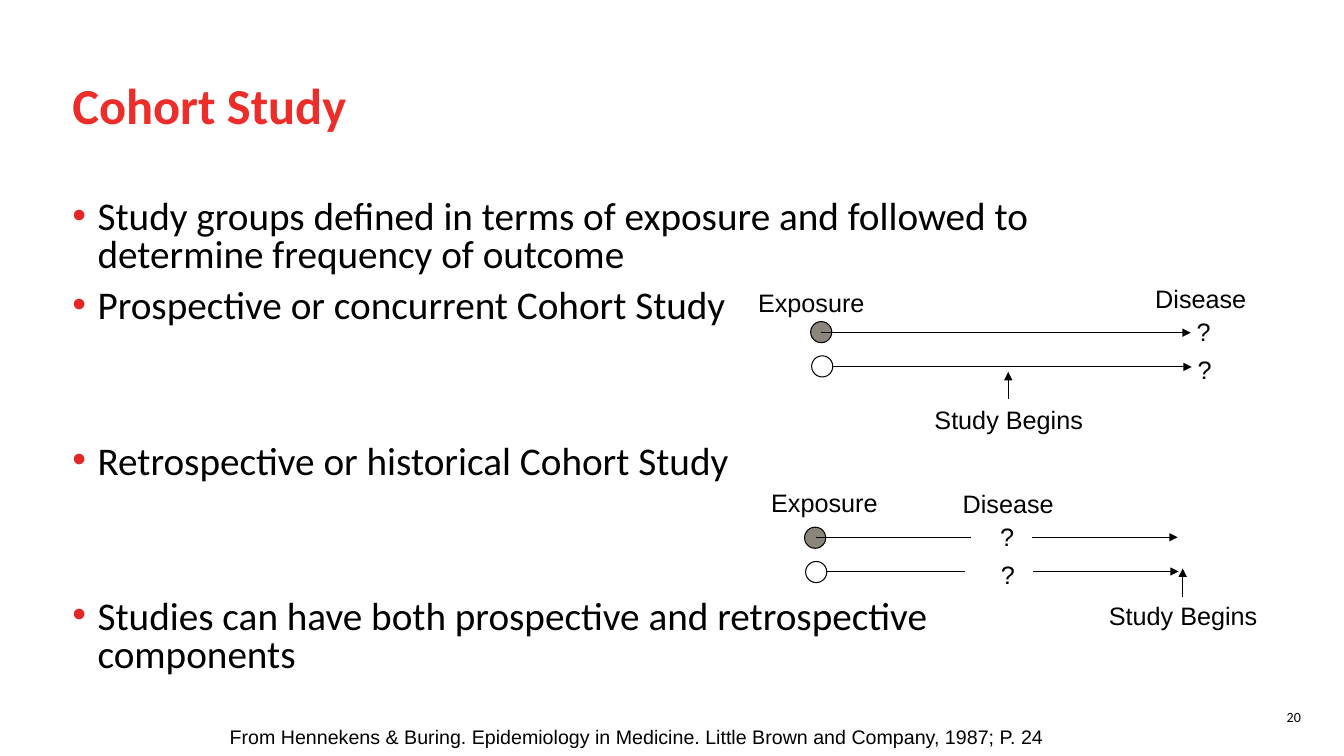
from lxml import etree
from pptx import Presentation
from pptx import util as u
from pptx.dml.color import RGBColor
from pptx.enum import shapes, text
from pptx.oxml.ns import qn

COLORS = {"title": "EE2C2A", "bullet": "E32726", "ink": "000000",
          "exposed": "8C857B", "unexposed": "FFFFFF"}

TITLE = "Cohort Study"
# (bullet text, points before it); wide gaps leave room for the diagrams
BULLETS = [
    ("Study groups defined in terms of exposure and followed to determine frequency of outcome", 0),
    ("Prospective or concurrent Cohort Study", 10),
    ("Retrospective or historical Cohort Study", 84),
    ("Studies can have both prospective and retrospective components", 84),
]
PAGE = "20"
CITATION = ("From Hennekens & Buring. Epidemiology in Medicine. "
            "Little Brown and Company, 1987; P. 24")

LABEL_WIDTHS = {"Exposure": 1.26, "Disease": 1.1, "Study Begins": 1.67, "?": 0.34}
DOT = 0.21
ROW_GAP = 0.34       # from the exposed row to the unexposed row
MARK_GAP = 0.38      # between the two question marks
NUDGE = 0.01         # the unexposed row sits slightly to the right

# dot: left and top of the exposed dot; lines: (row, x1, x2, has arrowhead)
DIAGRAMS = [
    {"dot": (8.04, 3.19), "axis": 3.3,
     "lines": [(0, 8.14, 11.81, True), (1, 8.26, 11.82, True)],
     "labels": [("Exposure", 7.42, 2.8), ("Disease", 11.36, 2.76), ("Study Begins", 9.17, 3.96)],
     "marks": (11.77, 3.09), "start": (10, 3.96, 3.69)},
    {"dot": (7.98, 5.23), "axis": 5.33,
     "lines": [(0, 8.09, 9.63, False), (1, 8.2, 9.57, False),
               (0, 10.24, 11.68, True), (1, 10.25, 11.69, True)],
     "labels": [("Exposure", 7.55, 4.79), ("Disease", 9.45, 4.8), ("Study Begins", 10.9, 5.91)],
     "marks": (9.82, 5.12), "start": (11.73, 5.92, 5.64)},
]

deck = Presentation()
deck.slide_width, deck.slide_height = u.Inches(13.33), u.Inches(7.5)
slide = deck.slides.add_slide(deck.slide_layouts[6])


def rgb(name):
    return RGBColor.from_string(COLORS[name])


def style(paragraph, size, font="Arial", color="ink", bold=False):
    paragraph.font.size = u.Pt(size)
    paragraph.font.name = font
    paragraph.font.bold = bold
    paragraph.font.color.rgb = rgb(color)


def add_text(words, left, top, width, height, wrap=True):
    frame = slide.shapes.add_textbox(*map(u.Inches, (left, top, width, height))).text_frame
    frame.word_wrap = wrap
    frame.text = words
    return frame


def add_label(words, left, top):
    label = add_text(words, left, top, LABEL_WIDTHS[words], 0.4, wrap=False)
    style(label.paragraphs[0], 18)


def add_line(x1, y1, x2, y2, arrow):
    line = slide.shapes.add_connector(shapes.MSO_CONNECTOR.STRAIGHT,
                                      *map(u.Inches, (x1, y1, x2, y2)))
    line.line.color.rgb = rgb("ink")
    line.line.width = u.Pt(0.75)
    if arrow:
        etree.SubElement(line.line._get_or_add_ln(), qn("a:tailEnd"), type="triangle")
    etree.SubElement(line._element.spPr, qn("a:effectLst"))


def add_dot(left, top, fill):
    dot = slide.shapes.add_shape(shapes.MSO_SHAPE.OVAL,
                                 *map(u.Inches, (left, top, DOT, DOT)))
    dot.shadow.inherit = False
    dot.fill.solid()
    dot.fill.fore_color.rgb = rgb(fill)
    dot.line.color.rgb = rgb("ink")
    dot.line.width = u.Pt(0.75)


def add_bullet(paragraph):
    props = paragraph._p.get_or_add_pPr()
    props.set("marL", str(u.Inches(0.25)))
    props.set("indent", str(-u.Inches(0.25)))
    color = etree.SubElement(props, qn("a:buClr"))
    etree.SubElement(color, qn("a:srgbClr"), val=COLORS["bullet"])
    etree.SubElement(props, qn("a:buFont"), typeface="Arial")
    etree.SubElement(props, qn("a:buChar"), char="•")


# Title
title = add_text(TITLE, 0.62, 0.51, 10.63, 1.13)
title.vertical_anchor = text.MSO_ANCHOR.MIDDLE
title.paragraphs[0].line_spacing = u.Pt(38)
style(title.paragraphs[0], 36, "Calibri", "title", bold=True)

# Bullets
body = add_text("\n".join(words for words, _ in BULLETS), 0.62, 1.94, 10.63, 4.5)
for paragraph, (_, gap) in zip(body.paragraphs, BULLETS):
    add_bullet(paragraph)
    paragraph.line_spacing = 0.8
    paragraph.space_before = u.Pt(gap)
    style(paragraph, 28, "Calibri")

# Timelines of the two study designs
for diagram in DIAGRAMS:
    dot_left, dot_top = diagram["dot"]
    mark_left, mark_top = diagram["marks"]
    for row, fill in enumerate(("exposed", "unexposed")):
        add_dot(dot_left + row * NUDGE, dot_top + row * ROW_GAP, fill)
        add_label("?", mark_left + row * NUDGE, mark_top + row * MARK_GAP)
    for row, x1, x2, arrow in diagram["lines"]:
        y = diagram["axis"] + row * ROW_GAP
        add_line(x1, y, x2, y, arrow)
    for label in diagram["labels"]:
        add_label(*label)
    start_x, start_bottom, start_top = diagram["start"]
    add_line(start_x, start_bottom, start_x, start_top, True)

# Page number and citation
page = add_text(PAGE, 10, 6.98, 3, 0.4).paragraphs[0]
page.alignment = text.PP_ALIGN.RIGHT
style(page, 10, "Calibri")
citation = add_text(CITATION, 2.18, 7.14, 9.06, 0.33)
style(citation.paragraphs[0], 14)

deck.save("out.pptx")
